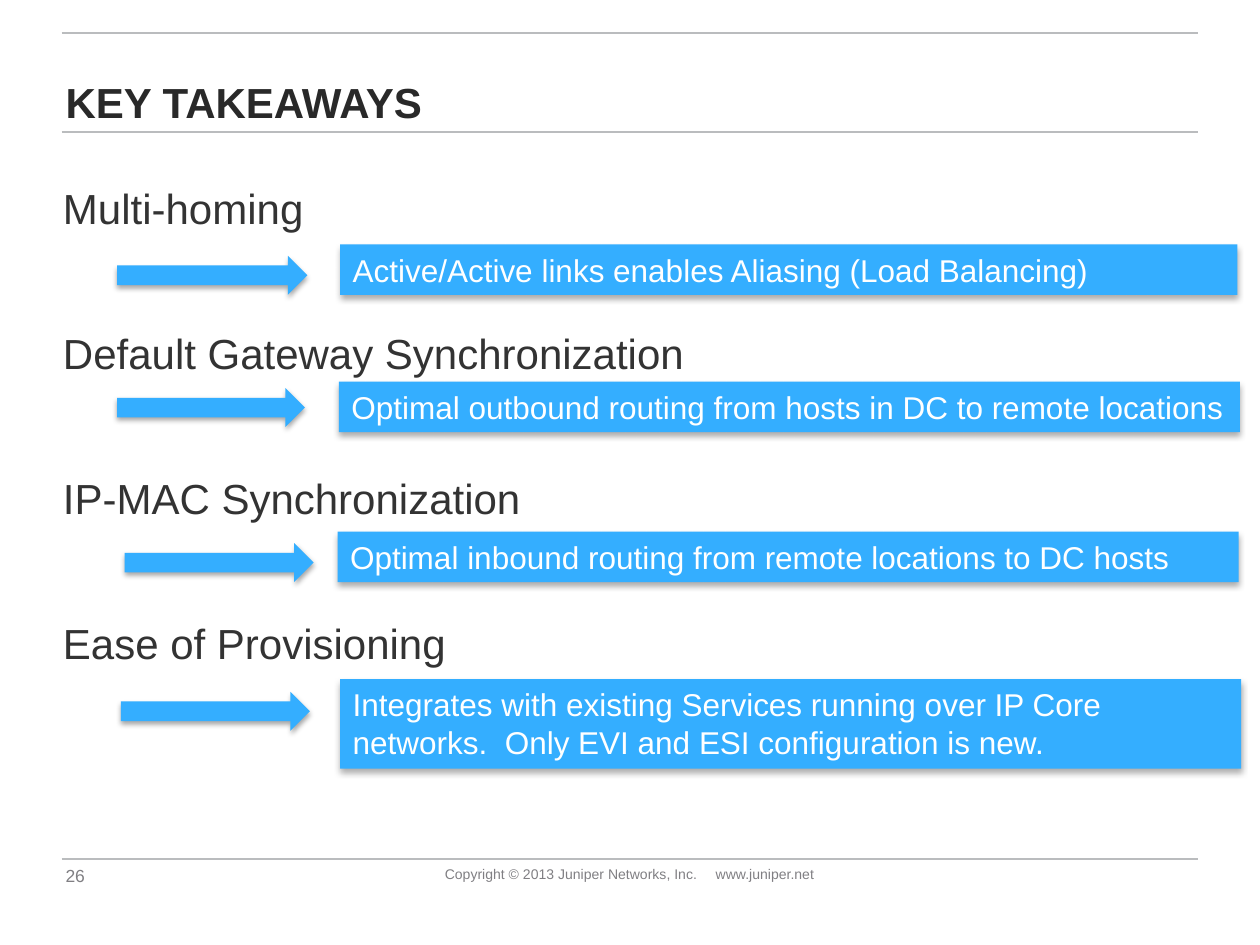
from dataclasses import dataclass

from lxml import etree
from pptx import Presentation
from pptx import util as u
from pptx.dml.color import RGBColor
from pptx.enum import shapes, text
from pptx.oxml.ns import qn


@dataclass(frozen=True)
class Theme:
    font: str = "Arial"
    title: str = "292929"
    heading: str = "333333"
    accent: str = "34AEFF"
    on_accent: str = "FFFFFF"
    footer: str = "807F83"
    rule: str = "BABCBE"
    heading_size: float = 24
    callout_size: float = 18
    number_size: float = 10
    copyright_size: float = 8


@dataclass(frozen=True)
class Area:
    left: float
    top: float
    width: float
    height: float

    def lengths(self) -> list:
        return [u.Inches(n) for n in (self.left, self.top, self.width, self.height)]


@dataclass(frozen=True)
class Shadow:
    alpha: int
    blur: float
    distance: float


@dataclass(frozen=True)
class Takeaway:
    heading: str
    benefit: str
    arrow: Area
    callout: Area


THEME = Theme()
ARROW_SHADOW = Shadow(35, 3.1, 1.8)
CALLOUT_SHADOW = Shadow(32, 3.5, 2.2)
RULE_TOPS = (0.26, 1.05, 6.82)
TAKEAWAYS = (
    Takeaway("Multi-homing",
             "Active/Active links enables Aliasing (Load Balancing)",
             Area(0.93, 2.03, 1.51, 0.31), Area(2.7, 1.94, 7.12, 0.4)),
    Takeaway("Default Gateway Synchronization",
             "Optimal outbound routing from hosts in DC to remote locations",
             Area(0.93, 3.08, 1.49, 0.31), Area(2.69, 3.03, 7.15, 0.4)),
    Takeaway("IP-MAC Synchronization",
             "Optimal inbound routing from remote locations to DC hosts",
             Area(0.99, 4.31, 1.5, 0.31), Area(2.68, 4.22, 7.15, 0.4)),
    Takeaway("Ease of Provisioning",
             "Integrates with existing Services running over IP Core networks.  "
             "Only EVI and ESI configuration is new.",
             Area(0.96, 5.49, 1.5, 0.31), Area(2.7, 5.39, 7.15, 0.71)),
)


def place(box, area: Area) -> None:
    box.left, box.top, box.width, box.height = area.lengths()


def set_frame(frame, left: float, top: float, right: float, bottom: float,
              anchor=text.MSO_ANCHOR.TOP, wrap: bool = True) -> None:
    frame.margin_left, frame.margin_top = u.Inches(left), u.Inches(top)
    frame.margin_right, frame.margin_bottom = u.Inches(right), u.Inches(bottom)
    frame.vertical_anchor = anchor
    frame.word_wrap = wrap
    frame.auto_size = text.MSO_AUTO_SIZE.NONE


def add_span(para, words: str, size: float, color: str, bold: bool = False) -> None:
    span = para.add_run()
    span.text = words
    span.font.name = THEME.font
    span.font.size = u.Pt(size)
    span.font.bold = bold
    span.font.color.rgb = RGBColor.from_string(color)
    para.alignment = text.PP_ALIGN.LEFT


def add_tab_stop(para, position: float) -> None:
    stops = etree.SubElement(para._p.get_or_add_pPr(), qn("a:tabLst"))
    etree.SubElement(stops, qn("a:tab"), pos=str(u.Inches(position)), algn="l")


def add_rule(page, top: float) -> None:
    y = u.Inches(top)
    rule = page.shapes.add_connector(
        shapes.MSO_CONNECTOR.STRAIGHT, u.Inches(0.49), y, u.Inches(9.51), y)
    rule.line.color.rgb = RGBColor.from_string(THEME.rule)
    rule.line.width = u.Pt(1)
    etree.SubElement(rule._element.spPr, qn("a:effectLst"))


def add_block(page, kind, area: Area, shadow: Shadow):
    block = page.shapes.add_shape(kind, *area.lengths())
    block.fill.solid()
    block.fill.fore_color.rgb = RGBColor.from_string(THEME.accent)
    block.line.fill.background()
    block.shadow.inherit = False
    # Soft shadow falling straight down
    effects = block._element.spPr.find(qn("a:effectLst"))
    outer = etree.SubElement(
        effects, qn("a:outerShdw"), blurRad=str(u.Pt(shadow.blur)),
        dist=str(u.Pt(shadow.distance)), dir="5400000", rotWithShape="0")
    color = etree.SubElement(outer, qn("a:srgbClr"), val="000000")
    etree.SubElement(color, qn("a:alpha"), val=str(shadow.alpha * 1000))
    return block


def add_takeaway(page, item: Takeaway) -> None:
    add_block(page, shapes.MSO_SHAPE.RIGHT_ARROW, item.arrow, ARROW_SHADOW)
    box = add_block(page, shapes.MSO_SHAPE.RECTANGLE, item.callout, CALLOUT_SHADOW)
    set_frame(box.text_frame, 0.1, 0.05, 0.1, 0.05)
    add_span(box.text_frame.paragraphs[0], item.benefit,
             THEME.callout_size, THEME.on_accent)


def add_title(page) -> None:
    title = page.shapes.title
    place(title, Area(0.52, 0.25, 8.99, 0.81))
    set_frame(title.text_frame, 0, 0.05, 0.1, 0.05, text.MSO_ANCHOR.BOTTOM)
    para = title.text_frame.paragraphs[0]
    para.line_spacing = 0.9
    para.space_after = u.Pt(5.3)
    add_span(para, "KEY TAKEAWAYS", THEME.heading_size, THEME.title, bold=True)


def add_headings(page) -> None:
    box = page.shapes.add_textbox(*Area(0.5, 1.4, 9.5, 5.63).lengths())
    frame = box.text_frame
    set_frame(frame, 0, 0.05, 0.1, 0.05)
    for index, item in enumerate(TAKEAWAYS):
        para = frame.add_paragraph() if index else frame.paragraphs[0]
        para.space_before = u.Pt(50 if index else 0)
        para.space_after = u.Pt(4)
        add_span(para, item.heading, THEME.heading_size, THEME.heading)


def add_footer(page) -> None:
    number = page.shapes.add_textbox(*Area(0.52, 6.81, 0.58, 0.22).lengths())
    set_frame(number.text_frame, 0, 0, 0, 0, text.MSO_ANCHOR.BOTTOM, wrap=False)
    add_span(number.text_frame.paragraphs[0], "26", THEME.number_size, THEME.footer)

    notice = page.shapes.add_textbox(*Area(3.41, 6.82, 3.19, 0.24).lengths())
    set_frame(notice.text_frame, 0.12, 0.05, 0, 0.05)
    para = notice.text_frame.paragraphs[0]
    add_tab_stop(para, 2.15)
    add_span(para, "Copyright © 2013 Juniper Networks, Inc.\twww.juniper.net",
             THEME.copyright_size, THEME.footer)


def main() -> None:
    deck = Presentation()
    deck.slide_width, deck.slide_height = u.Inches(10), u.Inches(7.5)
    page = deck.slides.add_slide(deck.slide_layouts[5])

    # Frame of the page
    for top in RULE_TOPS:
        add_rule(page, top)
    add_footer(page)

    # Title and takeaways
    add_title(page)
    add_headings(page)
    for item in TAKEAWAYS:
        add_takeaway(page, item)

    deck.save("out.pptx")


if __name__ == "__main__":
    main()
